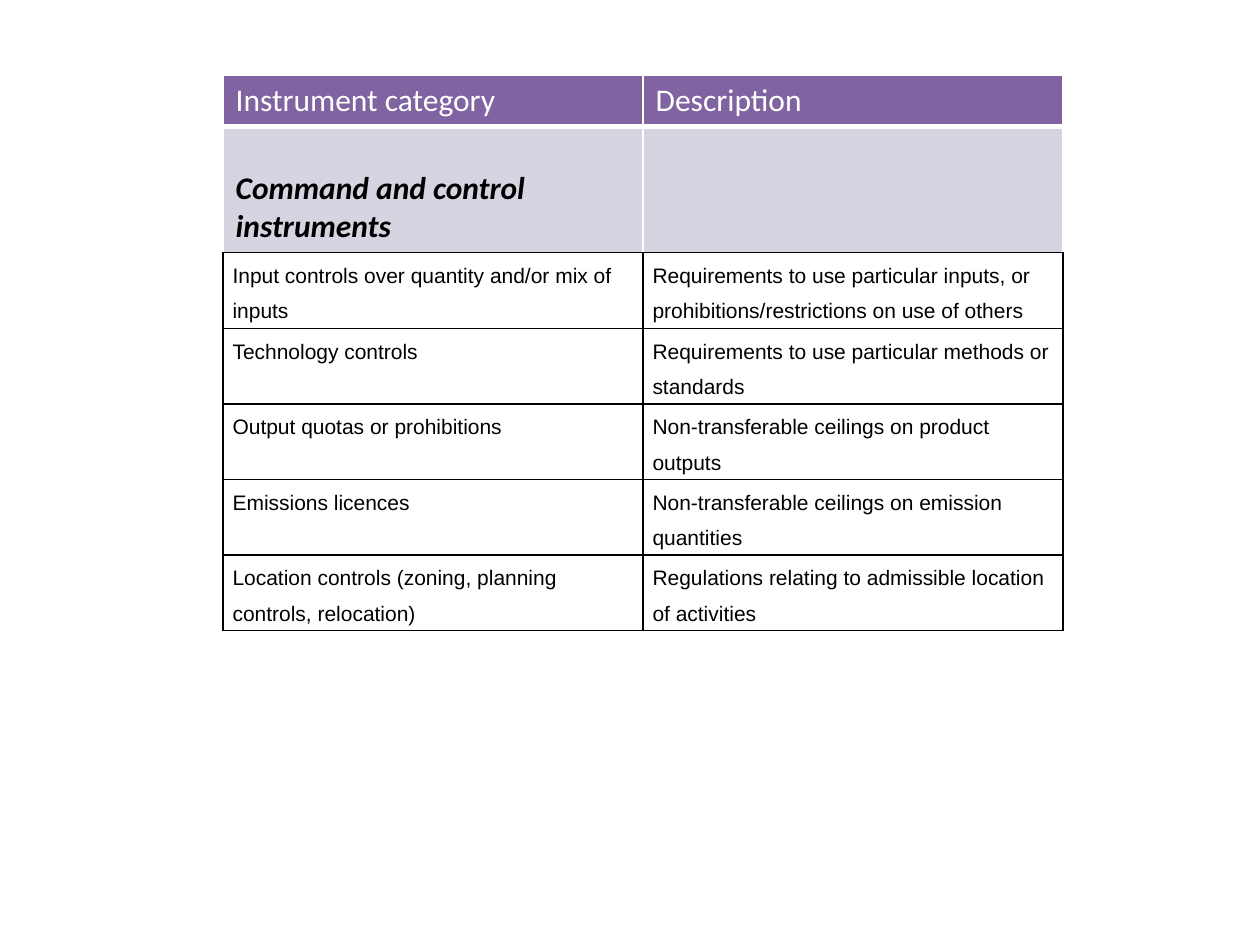
from lxml.etree import SubElement
from pptx import Presentation
from pptx.dml.color import RGBColor
from pptx.enum.text import MSO_ANCHOR
from pptx.oxml.ns import qn
from pptx.util import Pt

BODY = [
    ("Input controls over quantity and/or mix of inputs",
     "Requirements to use particular inputs, or prohibitions/restrictions on use of others"),
    ("Technology controls",
     "Requirements to use particular methods or standards"),
    ("Output quotas or prohibitions",
     "Non-transferable ceilings on product outputs"),
    ("Emissions licences",
     "Non-transferable ceilings on emission quantities"),
    ("Location controls (zoning, planning controls, relocation)",
     "Regulations relating to admissible location of activities"),
]


def shade(code):
    return RGBColor.from_string(code)


def write(frame, text, font="Calibri", size=18, color="000000",
          bold=False, italic=False, spacing=1.0):
    par = frame.paragraphs[0]
    par.line_spacing = spacing
    par.space_before = Pt(0)
    run = par.add_run()
    run.text = text
    style = run.font
    style.name, style.size = font, Pt(size)
    style.bold, style.italic = bold, italic
    style.color.rgb = shade(color)


class Deck:
    head = dict(fill="8064A2", edge="FFFFFF", base=("FFFFFF", 3),
                inset=(7.2, 3.6), color="FFFFFF")
    group = dict(fill="D8D3E0", edge="FFFFFF", base=("000000", 1),
                 inset=(7.2, 3.6), anchor=MSO_ANCHOR.BOTTOM,
                 bold=True, italic=True)
    body = dict(fill=None, edge="000000", base=("000000", 1),
                inset=(5.4, 0), font="Arial", size=12, spacing=1.5)

    def __init__(self, width, height):
        self.file = Presentation()
        self.file.slide_width, self.file.slide_height = Pt(width), Pt(height)
        self.slide = self.file.slides.add_slide(self.file.slide_layouts[6])

    def table(self, left, top, widths, rows):
        """Each row is (height, texts, look)."""
        heights = [row[0] for row in rows]
        grid = self.slide.shapes.add_table(
            len(rows), len(widths), Pt(left), Pt(top),
            Pt(sum(widths)), Pt(sum(heights))).table
        grid.horz_banding = False
        for col, width in zip(grid.columns, widths):
            col.width = Pt(width)
        for line, (height, texts, look) in zip(grid.rows, rows):
            line.height = Pt(height)
            for cell, text in zip(line.cells, texts):
                self.cell(cell, text, **look)

    def cell(self, cell, text, fill, edge, base, inset,
             anchor=MSO_ANCHOR.TOP, **style):
        cell.margin_left = cell.margin_right = Pt(inset[0])
        cell.margin_top = cell.margin_bottom = Pt(inset[1])
        cell.vertical_anchor = anchor
        for side in "LRT":
            self.border(cell, side, edge, 1)
        self.border(cell, "B", *base)
        if fill:
            cell.fill.solid()
            cell.fill.fore_color.rgb = shade(fill)
        else:
            cell.fill.background()
        if text:
            write(cell.text_frame, text, **style)

    def border(self, cell, side, color, width):
        props = cell._tc.get_or_add_tcPr()
        line = SubElement(props, qn(f"a:ln{side}"), w=str(Pt(width)))
        paint = SubElement(line, qn("a:solidFill"))
        SubElement(paint, qn("a:srgbClr"), val=color)


def main():
    deck = Deck(720, 540)
    rows = [
        (29.2, ("Instrument category", "Description"), deck.head),
        (72, ("Command and control instruments", ""), deck.group),
    ]
    rows += [(43.2, texts, deck.body) for texts in BODY]
    deck.table(127.5, 43.2, (240, 240), rows)
    deck.file.save("out.pptx")


if __name__ == "__main__":
    main()
